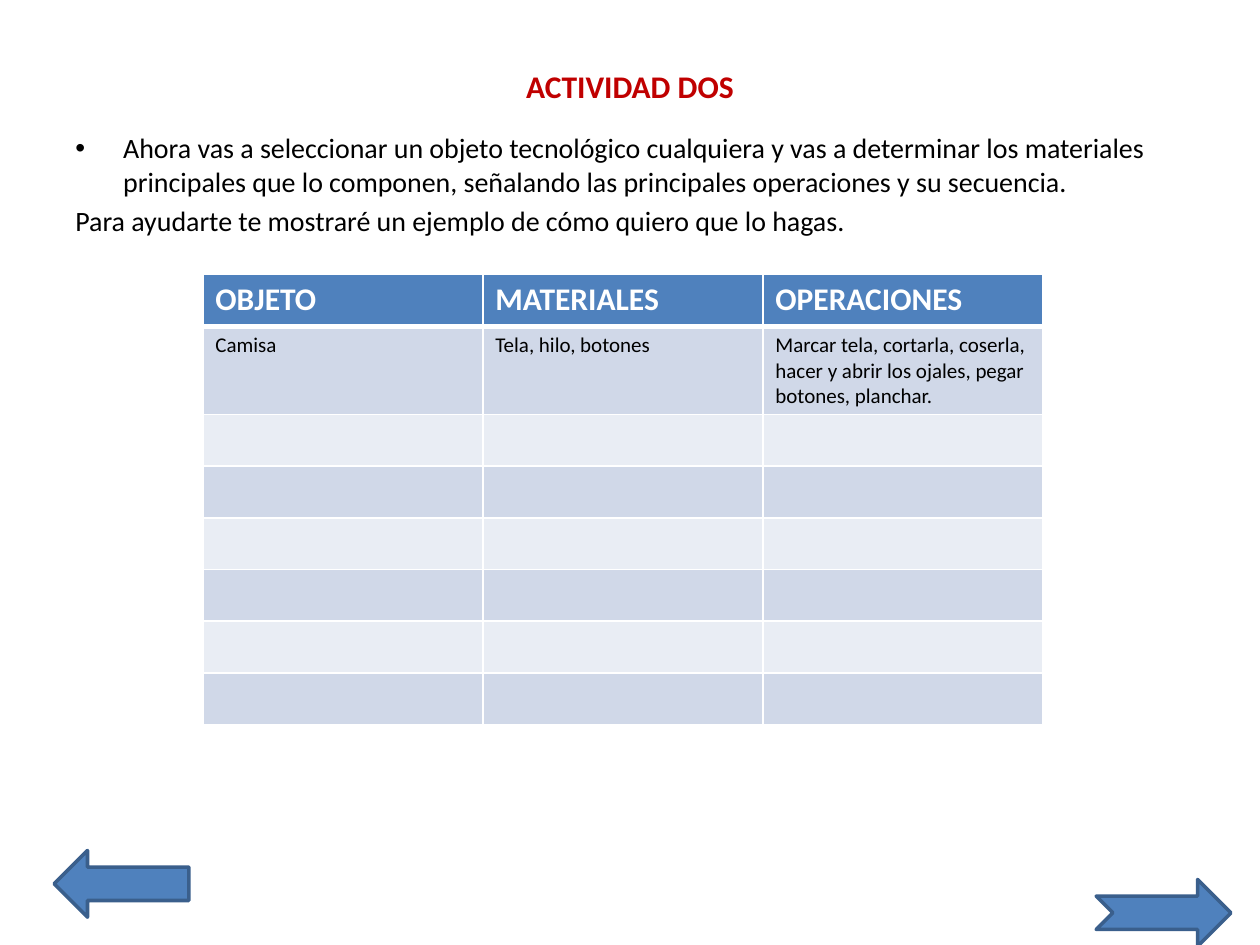
"""Build the 'Actividad dos' slide: instructions, a materials table and two arrows."""
from lxml.etree import SubElement
from pptx import Presentation
from pptx.dml.color import RGBColor
from pptx.enum.shapes import MSO_SHAPE as Shape
from pptx.enum.text import MSO_ANCHOR as Anchor, PP_ALIGN as Align
from pptx.oxml import parse_xml
from pptx.oxml.ns import nsdecls, qn
from pptx.util import Inches, Pt

RED = RGBColor(0xC0, 0x00, 0x00)
BLACK = RGBColor(0x00, 0x00, 0x00)
WHITE = RGBColor(0xFF, 0xFF, 0xFF)
BLUE = RGBColor(0x4F, 0x81, 0xBD)
DARK_BLUE = RGBColor(0x3A, 0x5F, 0x8C)
BANDS = (RGBColor(0xE9, 0xED, 0xF4), RGBColor(0xD0, 0xD8, 0xE8))

TITLE = "ACTIVIDAD DOS"
INSTRUCTION = (
    "Ahora vas a seleccionar un objeto tecnológico cualquiera y vas a determinar "
    "los materiales principales que lo componen, señalando las principales "
    "operaciones y su secuencia."
)
EXAMPLE_NOTE = "Para ayudarte te mostraré un ejemplo de cómo quiero que lo hagas."
HEADERS = ("OBJETO", "MATERIALES", "OPERACIONES")
EXAMPLE = (
    "Camisa",
    "Tela, hilo, botones",
    "Marcar tela, cortarla, coserla, hacer y abrir los ojales, pegar botones, planchar.",
)
EMPTY_ROWS = 6
ROWS = [HEADERS, EXAMPLE] + [("",) * len(HEADERS)] * EMPTY_ROWS
ARROWS = ((Shape.NOTCHED_RIGHT_ARROW, 8.7, 6.98), (Shape.LEFT_ARROW, 0.43, 6.75))

SLIDE_WIDTH, SLIDE_HEIGHT = 10, 7.5
MARGIN = SLIDE_WIDTH / 20
TABLE_LEFT, TABLE_TOP = 1.61, 2.18
COLUMN_WIDTH, ROW_HEIGHT = SLIDE_WIDTH * 2 / 9, 0.41
ARROW_WIDTH, ARROW_HEIGHT = 1.07, 0.53
BULLET_INDENT = 0.38


def write(paragraph, text, size=16, color=BLACK, bold=False, align=Align.LEFT, before=0):
    paragraph.alignment = align
    paragraph.space_before = Pt(before)
    target = paragraph.add_run() if text else paragraph
    if text:
        target.text = text
    font = target.font
    font.name, font.size, font.bold = "Calibri", Pt(size), bold
    font.color.rgb = color


def add_text_frame(slide, top, height, anchor):
    box = slide.shapes.add_textbox(
        Inches(MARGIN), Inches(top), Inches(SLIDE_WIDTH - 2 * MARGIN), Inches(height)
    )
    frame = box.text_frame
    frame.word_wrap, frame.vertical_anchor = True, anchor
    return frame


def add_bullet(paragraph, indent):
    properties = paragraph._p.get_or_add_pPr()
    properties.set("marL", str(Inches(indent)))
    properties.set("indent", str(-Inches(indent)))
    SubElement(properties, qn("a:buFont")).set("typeface", "Arial")
    SubElement(properties, qn("a:buChar")).set("char", "•")


def set_borders(cell, **widths):
    properties = cell._tc.get_or_add_tcPr()
    for position, (side, width) in enumerate(widths.items()):
        line = parse_xml(
            f'<a:ln{side} {nsdecls("a")} w="{Pt(width)}"><a:solidFill>'
            f'<a:srgbClr val="{WHITE}"/></a:solidFill></a:ln{side}>'
        )
        properties.insert(position, line)


def add_table(slide):
    table = slide.shapes.add_table(
        len(ROWS), len(HEADERS), Inches(TABLE_LEFT), Inches(TABLE_TOP),
        Inches(COLUMN_WIDTH * len(HEADERS)), Inches(ROW_HEIGHT * len(ROWS)),
    ).table
    table.first_row = table.horz_banding = False
    for row_index, texts in enumerate(ROWS):
        table.rows[row_index].height = Inches(ROW_HEIGHT)
        header = row_index == 0
        for column_index, text in enumerate(texts):
            cell = table.cell(row_index, column_index)
            cell.fill.solid()
            cell.fill.fore_color.rgb = BLUE if header else BANDS[row_index % 2]
            set_borders(cell, L=1, R=1, T=3 if row_index == 1 else 1, B=3 if header else 1)
            write(
                cell.text_frame.paragraphs[0], text, size=12 if texts is EXAMPLE else 18,
                color=WHITE if header else BLACK, bold=header,
            )


def add_arrow(slide, kind, left, top):
    arrow = slide.shapes.add_shape(
        kind, Inches(left), Inches(top), Inches(ARROW_WIDTH), Inches(ARROW_HEIGHT)
    )
    arrow.shadow.inherit = False
    arrow.fill.solid()
    arrow.fill.fore_color.rgb = BLUE
    arrow.line.color.rgb = DARK_BLUE
    arrow.line.width = Pt(2)


def main():
    presentation = Presentation()
    presentation.slide_width, presentation.slide_height = Inches(SLIDE_WIDTH), Inches(SLIDE_HEIGHT)
    slide = presentation.slides.add_slide(presentation.slide_layouts[6])

    title = add_text_frame(slide, 0.3, 0.77, Anchor.MIDDLE)
    write(title.paragraphs[0], TITLE, size=18, color=RED, bold=True, align=Align.CENTER)

    body = add_text_frame(slide, 0.99, 5.71, Anchor.TOP)
    write(body.paragraphs[0], INSTRUCTION, before=3.2)
    add_bullet(body.paragraphs[0], BULLET_INDENT)
    write(body.add_paragraph(), EXAMPLE_NOTE, before=3.2)

    add_table(slide)
    for kind, left, top in ARROWS:
        add_arrow(slide, kind, left, top)
    presentation.save("out.pptx")


if __name__ == "__main__":
    main()
